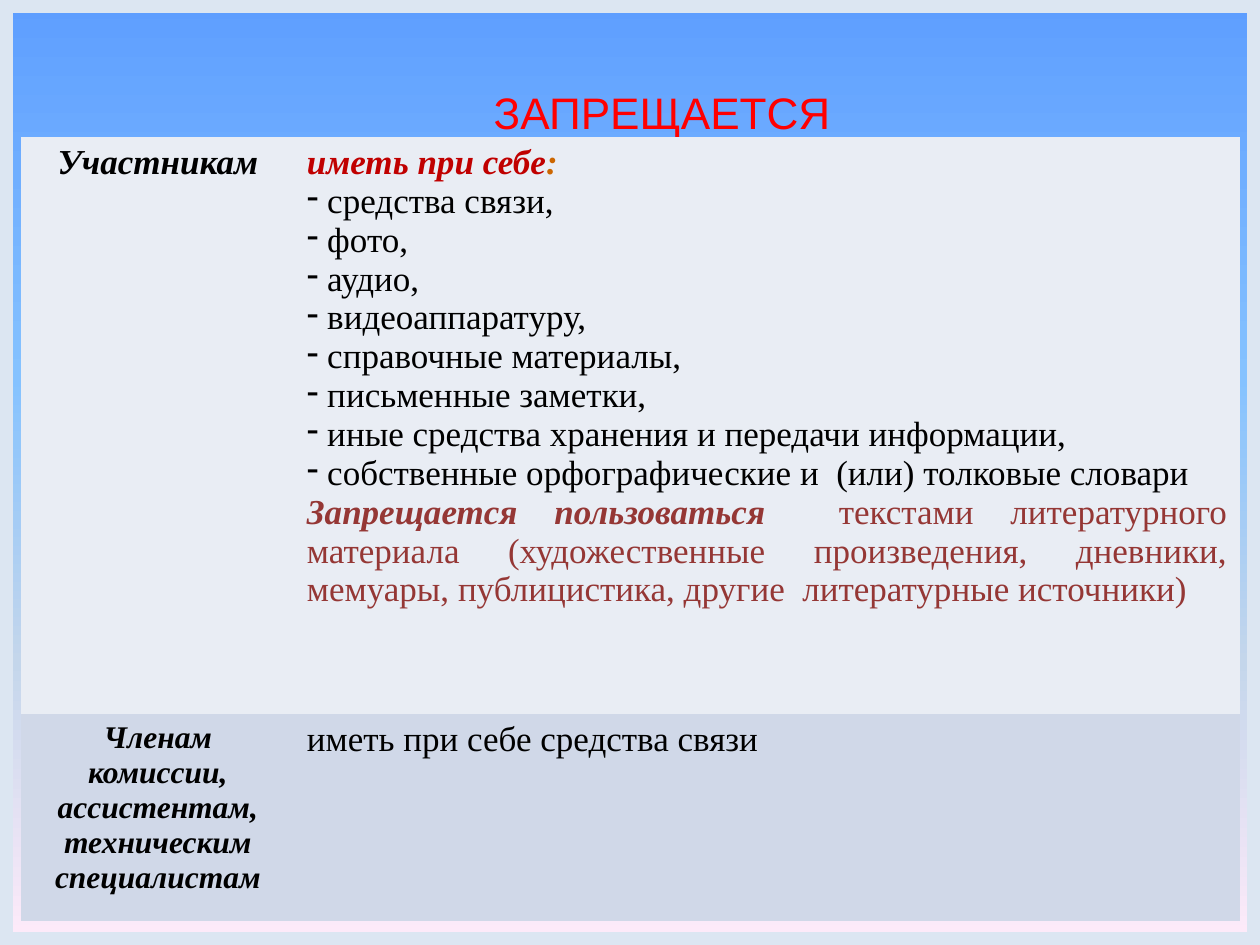
from copy import deepcopy
from dataclasses import dataclass

from lxml.etree import SubElement
from pptx import Presentation
from pptx.dml.color import RGBColor
from pptx.enum.shapes import MSO_SHAPE as Shape
from pptx.enum.text import MSO_ANCHOR as Anchor, PP_ALIGN as Align
from pptx.oxml.ns import qn
from pptx.util import Inches, Pt

WIDTH, HEIGHT = 10, 7.5
NO_STYLE_NO_GRID = "{2D5ABB26-0587-4C30-8999-92F81FD0307C}"
BLACK, DARK_RED, BROWN = "000000", "C00000", "953735"


def rgb(value):
    return RGBColor.from_string(value)


@dataclass
class Text:
    """A run of text with its look."""
    words: str
    color: str = BLACK
    size: float = 20
    strong: bool = False
    font: str = "Times New Roman"


@dataclass
class Line:
    """A paragraph: its runs, alignment, bullet and hanging indent in inches."""
    runs: list
    align: int = Align.JUSTIFY
    bullet: str = ""
    hanging: float = 0


class SlideBuilder:
    def __init__(self, slide):
        self.slide = slide

    def place(self, left, top, width, height):
        """Turn shares of the slide's size into lengths."""
        return [Inches(share * size) for share, size in
                zip((left, top, width, height), (WIDTH, HEIGHT) * 2)]

    def background(self, stops):
        fill = self.slide.background.fill
        fill.gradient()
        fill.gradient_angle = 270
        stop_list = self.slide.element.xpath(".//a:gsLst")[0]
        while len(stop_list) < len(stops):
            stop_list.append(deepcopy(stop_list[0]))
        for stop, (position, color) in zip(fill.gradient_stops, stops):
            stop.position = position
            stop.color.rgb = rgb(color)

    def frame(self, area, thickness, color, line_width):
        frame = self.slide.shapes.add_shape(Shape.FRAME, *self.place(*area))
        frame.shadow.inherit = False
        frame.adjustments[0] = thickness
        frame.fill.solid()
        frame.fill.fore_color.rgb = rgb(color)
        frame.line.color.rgb = rgb(color)
        frame.line.width = Pt(line_width)

    def title(self, area, line):
        box = self.slide.shapes.add_textbox(*self.place(*area))
        box.text_frame.word_wrap = True
        box.text_frame.vertical_anchor = Anchor.MIDDLE
        self.add_lines(box.text_frame, [line])

    def table(self, area, columns, rows, cells, fills):
        """Columns and rows are shares of the table's width and height."""
        left, top, width, height = self.place(*area)
        graphic = self.slide.shapes.add_table(len(rows), len(columns), left, top, width, height)
        table = graphic.table
        table.first_row = table.horz_banding = False
        graphic.element.xpath(".//a:tableStyleId")[0].text = NO_STYLE_NO_GRID
        for column, share in zip(table.columns, columns):
            column.width = int(width * share)
        for row, share in zip(table.rows, rows):
            row.height = int(height * share)
        for row, contents, color in zip(table.rows, cells, fills):
            for cell, lines in zip(row.cells, contents):
                cell.fill.solid()
                cell.fill.fore_color.rgb = rgb(color)
                self.add_lines(cell.text_frame, lines)

    def add_lines(self, text_frame, lines):
        for number, line in enumerate(lines):
            para = text_frame.add_paragraph() if number else text_frame.paragraphs[0]
            para.alignment = line.align
            properties = para._p.get_or_add_pPr()
            if line.hanging:
                properties.set("marL", str(Inches(line.hanging)))
                properties.set("indent", str(-Inches(line.hanging)))
            if line.bullet:
                SubElement(properties, qn("a:buChar"), char=line.bullet)
            for text in line.runs:
                span = para.add_run()
                span.text = text.words
                span.font.name = text.font
                span.font.size = Pt(text.size)
                span.font.bold = span.font.italic = text.strong
                span.font.color.rgb = rgb(text.color)


def main():
    deck = Presentation()
    deck.slide_width, deck.slide_height = Inches(WIDTH), Inches(HEIGHT)
    page = SlideBuilder(deck.slides.add_slide(deck.slide_layouts[6]))

    page.background([(0, "5E9EFF"), (0.4, "85C2FF"), (0.7, "C4D6EB"), (1, "FFEBFA")])
    page.frame((0, 0, 1, 1), 0.008, "DCE6F2", 6)
    page.title((0.067, 0.09, 0.917, 0.056),
               Line([Text("ЗАПРЕЩАЕТСЯ", "FF0000", 25.2, font="Arial")], Align.CENTER))

    forbidden_items = [
        "средства связи,", "фото,", "аудио,", "видеоаппаратуру,",
        "справочные материалы,", "письменные заметки,",
        "иные средства хранения и передачи информации,",
        "собственные орфографические и  (или) толковые словари",
    ]
    participants = [Line([Text("Участникам", strong=True)], Align.CENTER, hanging=0.38)]
    participant_rules = [
        Line([Text("иметь при себе", DARK_RED, strong=True),
              Text(":", "CC6600", strong=True)]),
        *[Line([Text(" " + item)], bullet="-") for item in forbidden_items],
        Line([Text("Запрещается пользоваться  ", BROWN, strong=True),
              Text("текстами литературного материала (художественные произведения, "
                   "дневники, мемуары, публицистика, другие  литературные источники)",
                   BROWN)]),
    ]
    staff = [Line([Text("Членам комиссии, ассистентам, техническим специалистам",
                        size=18, strong=True)], Align.CENTER)]
    staff_rules = [Line([Text("иметь при себе средства связи")], Align.LEFT, hanging=0.38)]

    page.table((0.017, 0.145, 0.967, 0.83), (0.224, 0.776), (0.736, 0.264),
               [(participants, participant_rules), (staff, staff_rules)],
               ("E9EDF4", "D0D8E8"))
    deck.save("out.pptx")


if __name__ == "__main__":
    main()
